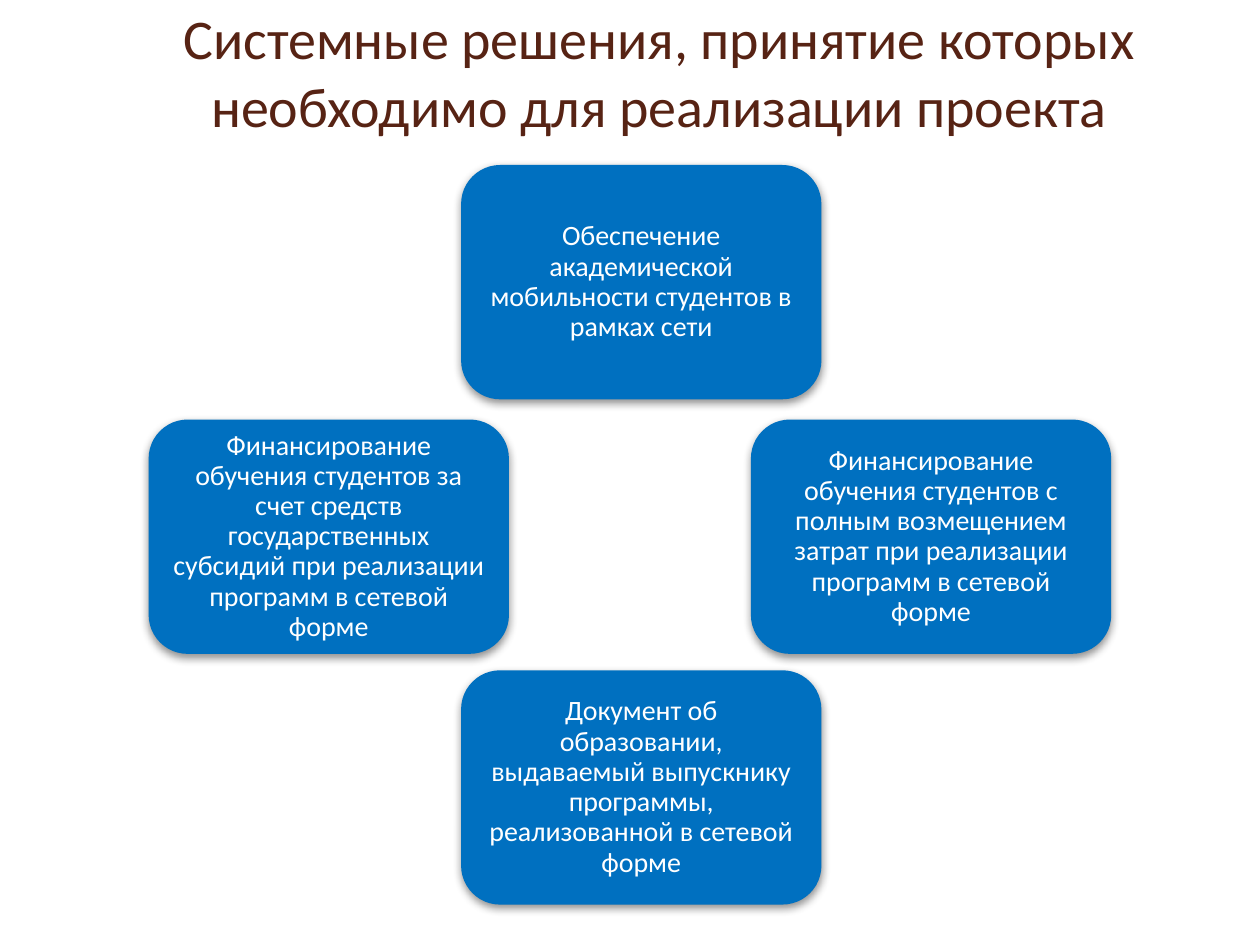
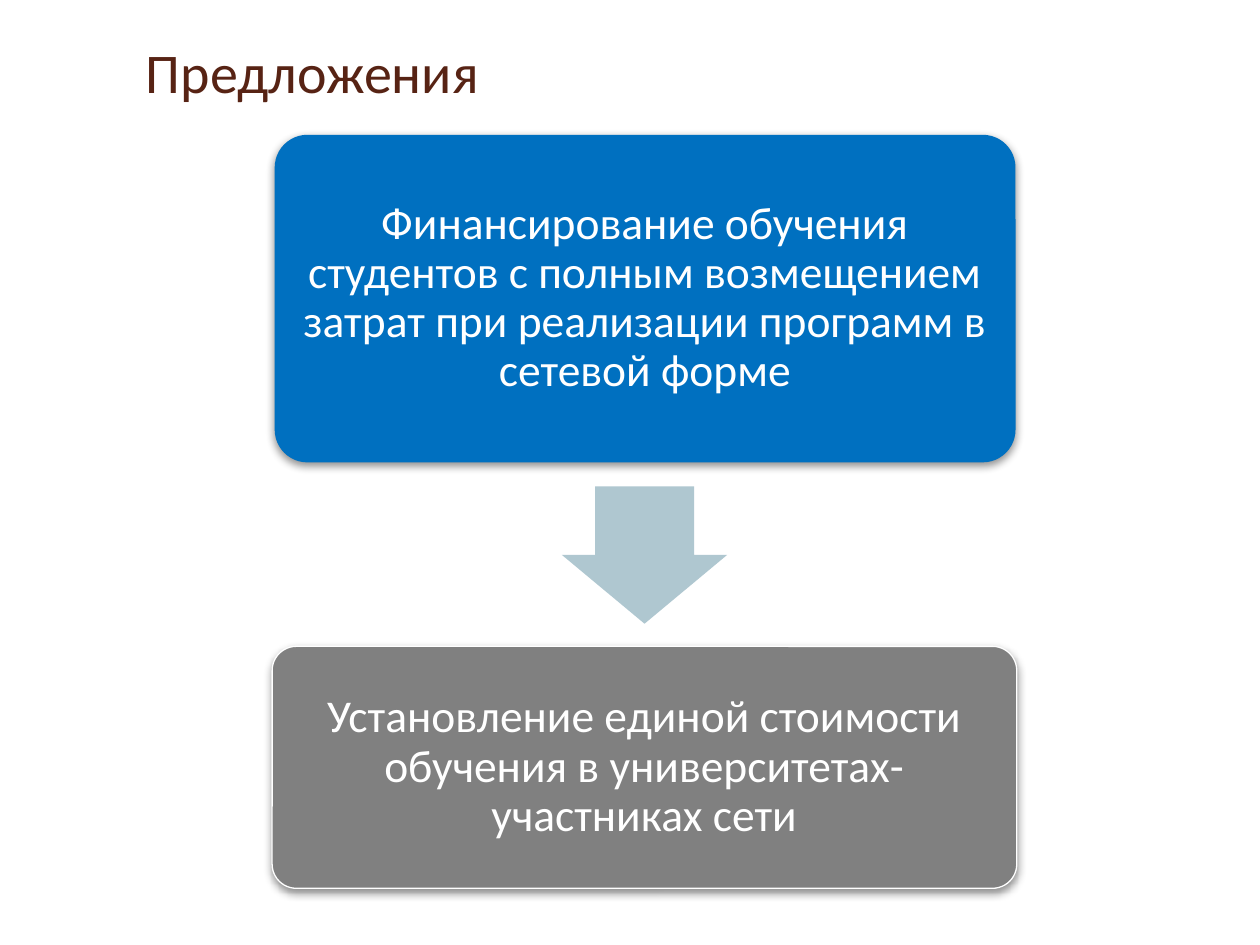
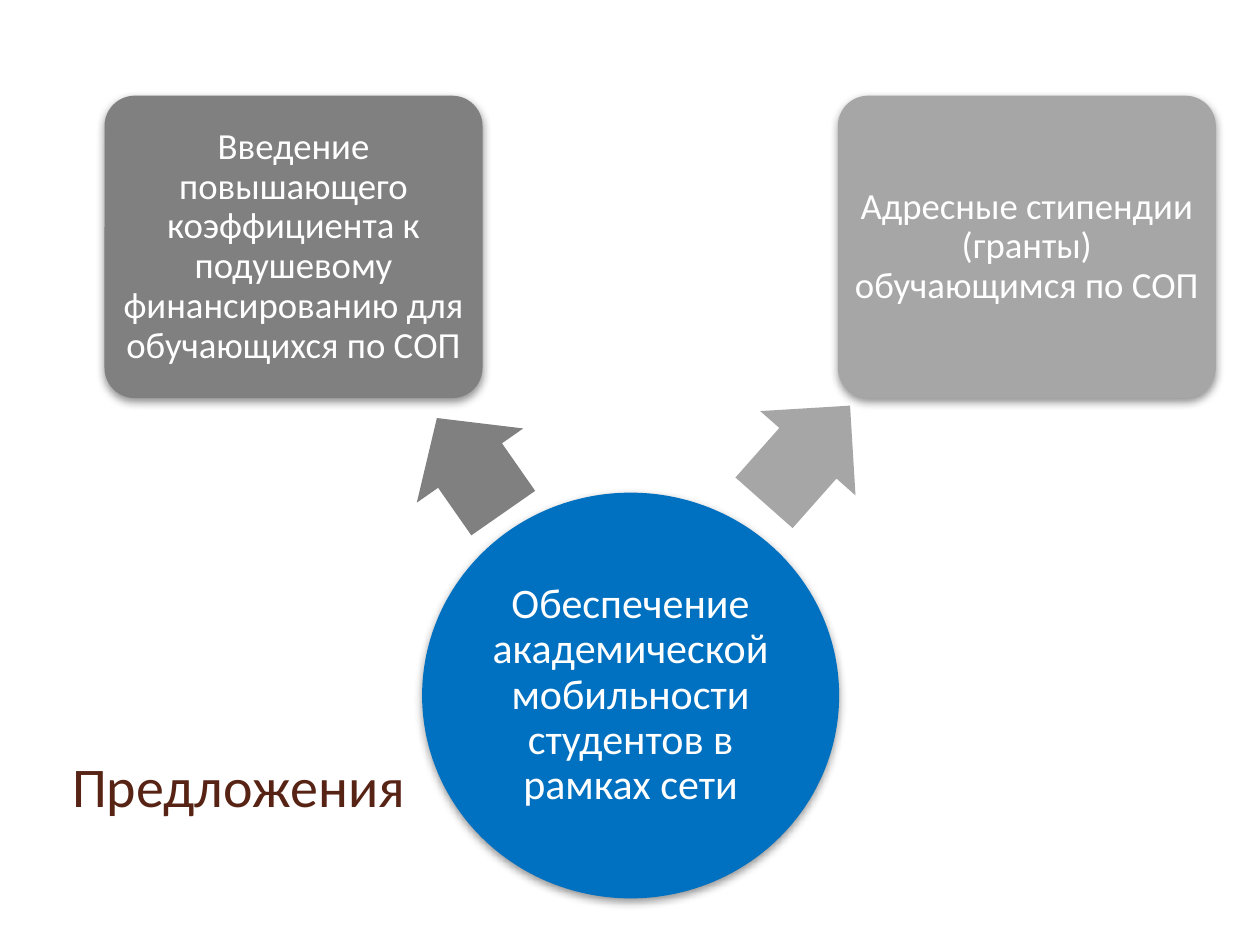
from lxml import etree
from pptx import Presentation
from pptx.dml.color import RGBColor
from pptx.enum.shapes import MSO_SHAPE as Shape
from pptx.enum.text import MSO_ANCHOR as Anchor, MSO_AUTO_SIZE as AutoSize, PP_ALIGN as Align
from pptx.oxml.ns import qn
from pptx.util import Inches, Pt

BLUE = RGBColor(0x00, 0x70, 0xC0)
GRAY = RGBColor(0x80, 0x80, 0x80)
LIGHT_GRAY = RGBColor(0xA6, 0xA6, 0xA6)
PALE_BLUE = RGBColor(0xAF, 0xC7, 0xD0)
BROWN = RGBColor(0x57, 0x23, 0x14)
WHITE = RGBColor(0xFF, 0xFF, 0xFF)
FONT = "Calibri"
TITLE_ONLY = 5

MOBILITY = "Обеспечение академической мобильности студентов в рамках сети"
FULL_COST = ("Финансирование обучения студентов с полным возмещением затрат "
             "при реализации программ в сетевой форме")
SUBSIDIES = ("Финансирование обучения студентов за счет средств государственных "
             "субсидий при реализации программ в сетевой форме")
DIPLOMA = ("Документ об образовании, выдаваемый выпускнику программы, "
           "реализованной в сетевой форме")
SINGLE_PRICE = "Установление единой стоимости обучения в университетах-участниках сети"
COEFFICIENT = ("Введение повышающего коэффициента к подушевому финансированию "
               "для обучающихся по СОП")
GRANTS = "Адресные стипендии (гранты) обучающимся по СОП"


def write_text(shape, text, size, color=WHITE, spacing=1.0, inset=None):
    frame = shape.text_frame
    frame.word_wrap = True
    frame.auto_size = AutoSize.NONE
    frame.vertical_anchor = Anchor.MIDDLE
    if inset is not None:
        frame.margin_left = frame.margin_right = Inches(inset)
        frame.margin_top = frame.margin_bottom = Inches(inset)
    para = frame.paragraphs[0]
    para.alignment = Align.CENTER
    para.line_spacing = spacing
    span = para.add_run()
    span.text = text
    span.font.name = FONT
    span.font.size = Pt(size)
    span.font.color.rgb = color


def add_titled_slide(deck, text, left, top, width):
    slide = deck.slides.add_slide(deck.slide_layouts[TITLE_ONLY])
    title = slide.shapes.title
    title.left, title.top = Inches(left), Inches(top)
    title.width, title.height = Inches(width), Inches(0.87)
    write_text(title, text, 32, color=BROWN)
    return slide


def add_filled_shape(slide, kind, place, color, adjustments=()):
    shape = slide.shapes.add_shape(kind, *map(Inches, place))
    shape.shadow.inherit = False
    shape.fill.solid()
    shape.fill.fore_color.rgb = color
    shape.line.fill.background()
    for index, value in enumerate(adjustments):
        shape.adjustments[index] = value
    return shape


def add_soft_shadow(shape):
    effects = shape.element.spPr.find(qn("a:effectLst"))
    shadow = etree.SubElement(effects, qn("a:outerShdw"), blurRad=str(Pt(5)),
                              dist=str(Pt(2)), dir="5400000", rotWithShape="0")
    black = etree.SubElement(shadow, qn("a:srgbClr"), val="000000")
    etree.SubElement(black, qn("a:alpha"), val="43000")


def add_card(slide, text, place, size, inset, color=BLUE, kind=Shape.ROUNDED_RECTANGLE,
             adjustments=(0.1,)):
    card = add_filled_shape(slide, kind, place, color, adjustments)
    add_soft_shadow(card)
    write_text(card, text, size, spacing=0.9, inset=inset)
    return card


def add_arrow(slide, kind, place, rotation, color):
    arrow = add_filled_shape(slide, kind, place, color, (0.6, 0.5))
    arrow.rotation = rotation


def build_decisions(deck):
    slide = add_titled_slide(
        deck, "Системные решения, принятие которых необходимо для реализации проекта",
        0.59, 0.13, 9.29)
    cards = [(MOBILITY, 3.66, 1.31), (FULL_COST, 5.96, 3.33),
             (DIPLOMA, 3.66, 5.32), (SUBSIDIES, 1.18, 3.33)]
    for text, left, top in cards:
        add_card(slide, text, (left, top, 2.86, 1.86), 16, 0.07, adjustments=())


def build_price_proposal(deck):
    slide = add_titled_slide(deck, "Предложения", 0.51, 0.13, 3.94)
    add_card(slide, FULL_COST, (2.18, 1.07, 5.88, 2.6), 26, 0.11)
    add_arrow(slide, Shape.RIGHT_ARROW, (4.57, 3.75, 1.09, 1.31), 90, PALE_BLUE)
    answer = add_card(slide, SINGLE_PRICE, (2.16, 5.13, 5.91, 1.92), 26, 0.11, color=GRAY)
    answer.line.color.rgb = WHITE
    answer.line.width = Pt(0.75)


def build_mobility_proposals(deck):
    slide = add_titled_slide(deck, "Предложения", 0.2, 5.8, 3.39)
    add_card(slide, MOBILITY, (3.35, 3.91, 3.31, 3.22), 24, 0.02,
             kind=Shape.OVAL, adjustments=())
    proposals = [(COEFFICIENT, 0.83, GRAY, (3.27, 3.18, 0.92, 1.03), 55.1),
                 (GRANTS, 6.65, LIGHT_GRAY, (5.89, 3.1, 1.03, 1.01), 131.5)]
    for text, left, color, arrow_place, rotation in proposals:
        add_arrow(slide, Shape.LEFT_ARROW, arrow_place, rotation, color)
        add_card(slide, text, (left, 0.76, 3, 2.4), 21, 0.04, color=color)


def main():
    deck = Presentation()
    deck.slide_width, deck.slide_height = Inches(10), Inches(7.5)
    build_decisions(deck)
    build_price_proposal(deck)
    build_mobility_proposals(deck)
    deck.save("out.pptx")


if __name__ == "__main__":
    main()
